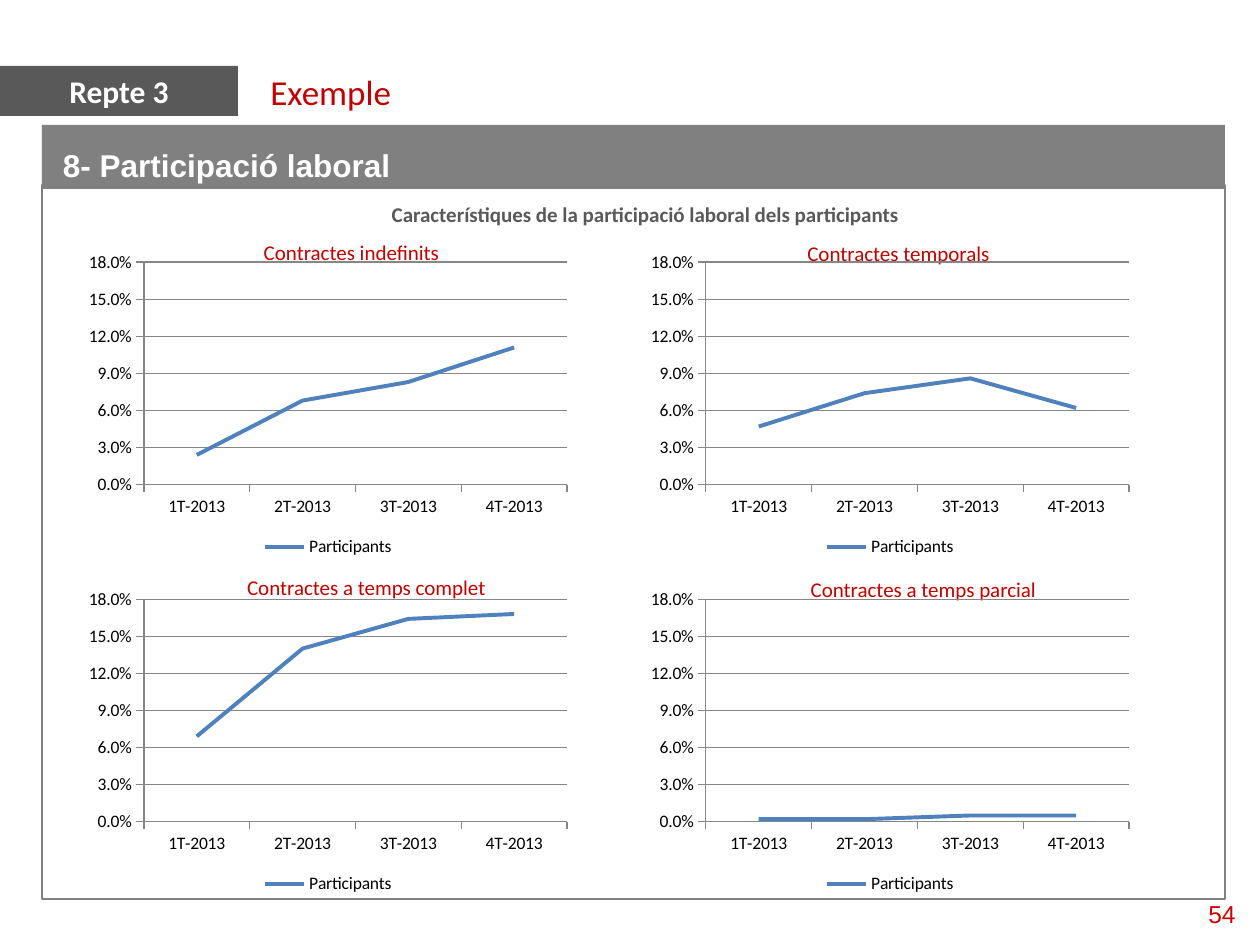
from dataclasses import dataclass

from pptx import Presentation
from pptx import util as u
from pptx.chart.data import CategoryChartData
from pptx.dml.color import RGBColor
from pptx.enum import chart as charts, shapes, text

EMU_PER_PX = 914400 / 126

WHITE = RGBColor(0xFF, 0xFF, 0xFF)
BLACK = RGBColor(0x00, 0x00, 0x00)
DARK_GRAY = RGBColor(0x59, 0x59, 0x59)
GRAY = RGBColor(0x80, 0x80, 0x80)
AXIS_GRAY = RGBColor(0x86, 0x86, 0x86)
RED = RGBColor(0xC0, 0x00, 0x00)
PAGE_RED = RGBColor(0xCC, 0x00, 0x00)
BLUE = RGBColor(0x4F, 0x81, 0xBD)

QUARTERS = ["1T-2013", "2T-2013", "3T-2013", "4T-2013"]
CHART_LEFT, CHART_TOP = 79, 246
CHART_WIDTH, CHART_HEIGHT = 498, 316
COLUMN_STEP, ROW_STEP = 562, 337


@dataclass(frozen=True)
class Box:
    left: int
    top: int
    width: int
    height: int

    def emu(self) -> list[int]:
        return [px(n) for n in (self.left, self.top, self.width, self.height)]


@dataclass(frozen=True)
class Label:
    box: Box
    words: str
    size: int
    color: RGBColor
    font: str = "Calibri"
    bold: bool = False
    align: text.PP_ALIGN = text.PP_ALIGN.CENTER


@dataclass(frozen=True)
class ContractChart:
    title_box: Box
    title: str
    values: tuple[float, ...]


def px(count: int) -> int:
    return round(count * EMU_PER_PX)


def apply(target, values: dict) -> None:
    for name, value in values.items():
        setattr(target, name, value)


def write(shape, label: Label) -> None:
    shape.text_frame.word_wrap = True
    paragraph = shape.text_frame.paragraphs[0]
    paragraph.text = label.words
    paragraph.alignment = label.align
    apply(paragraph.font, {"name": label.font, "size": u.Pt(label.size), "bold": label.bold})
    paragraph.font.color.rgb = label.color


def add_label(slide, label: Label) -> None:
    shape = slide.shapes.add_textbox(*label.box.emu())
    write(shape, label)


def add_rectangle(slide, box: Box, fill: RGBColor | None = None, line: RGBColor | None = None):
    shape = slide.shapes.add_shape(shapes.MSO_SHAPE.RECTANGLE, *box.emu())
    shape.shadow.inherit = False
    if fill is None:
        shape.fill.background()
    else:
        shape.fill.solid()
        shape.fill.fore_color.rgb = fill
    if line is None:
        shape.line.fill.background()
    else:
        shape.line.color.rgb = line
        shape.line.width = u.Pt(0.75)
    return shape


def add_line_chart(slide, box: Box, values: tuple[float, ...]) -> None:
    data = CategoryChartData(number_format="0.0%")
    data.categories = QUARTERS
    data.add_series("Participants", values)
    chart = slide.shapes.add_chart(charts.XL_CHART_TYPE.LINE, *box.emu(), data).chart
    apply(chart.font, {"name": "Calibri", "size": u.Pt(10)})
    chart.font.color.rgb = BLACK
    apply(chart, {"has_title": False, "has_legend": True})
    apply(chart.legend, {"position": charts.XL_LEGEND_POSITION.BOTTOM, "include_in_layout": False})

    # Axes
    apply(chart.value_axis, {"minimum_scale": 0, "maximum_scale": 0.18, "major_unit": 0.03,
                             "has_major_gridlines": True})
    apply(chart.value_axis.tick_labels, {"number_format": "0.0%", "number_format_is_linked": False})
    chart.value_axis.major_gridlines.format.line.color.rgb = AXIS_GRAY
    for axis in (chart.category_axis, chart.value_axis):
        axis.major_tick_mark = charts.XL_TICK_MARK.OUTSIDE
        axis.format.line.color.rgb = AXIS_GRAY

    # Series
    chart.plots[0].vary_by_categories = False
    series = chart.plots[0].series[0]
    series.smooth = False
    series.marker.style = charts.XL_MARKER_STYLE.NONE
    series.format.line.color.rgb = BLUE
    series.format.line.width = u.Pt(2.25)


LABELS = [
    Label(Box(1196, 893, 64, 43), "54", 14, PAGE_RED, "Arial", align=text.PP_ALIGN.LEFT),
    Label(Box(258, 64, 927, 50), "Exemple", 20, RED, align=text.PP_ALIGN.LEFT),
    Label(Box(154, 195, 983, 50),
          "Característiques de la participació laboral dels participants", 12, DARK_GRAY, bold=True),
]
HEADING = Label(Box(42, 125, 1183, 64), "8- Participació laboral", 18, WHITE, "Arial", True,
                text.PP_ALIGN.LEFT)
TAB = Label(Box(0, 66, 238, 50), "Repte 3", 18, WHITE, bold=True)
PANEL = Box(42, 185, 1183, 714)

CONTRACT_CHARTS = [
    ContractChart(Box(233, 233, 237, 50), "Contractes indefinits", (0.024, 0.068, 0.083, 0.111)),
    ContractChart(Box(780, 234, 237, 50), "Contractes temporals", (0.047, 0.074, 0.086, 0.062)),
    ContractChart(Box(223, 568, 287, 50), "Contractes a temps complet", (0.069, 0.14, 0.164, 0.168)),
    ContractChart(Box(780, 570, 287, 50), "Contractes a temps parcial", (0.002, 0.002, 0.005, 0.005)),
]


def main() -> None:
    presentation = Presentation()
    apply(presentation, {"slide_width": px(1260), "slide_height": px(945)})
    slide = presentation.slides.add_slide(presentation.slide_layouts[6])

    # Heading bar and panel
    heading = add_rectangle(slide, HEADING.box, fill=GRAY)
    write(heading, HEADING)
    apply(heading.text_frame, {"margin_left": px(21), "margin_top": px(21), "margin_bottom": px(5),
                               "vertical_anchor": text.MSO_ANCHOR.MIDDLE})
    add_rectangle(slide, PANEL, line=GRAY)

    # Titles and page number
    for label in LABELS:
        add_label(slide, label)
    for contract in CONTRACT_CHARTS:
        add_label(slide, Label(contract.title_box, contract.title, 12, RED))

    # Two by two grid of charts
    for index, contract in enumerate(CONTRACT_CHARTS):
        row, column = divmod(index, 2)
        box = Box(CHART_LEFT + column * COLUMN_STEP, CHART_TOP + row * ROW_STEP,
                  CHART_WIDTH, CHART_HEIGHT)
        add_line_chart(slide, box, contract.values)

    # Challenge tab
    tab = add_rectangle(slide, TAB.box, fill=DARK_GRAY)
    write(tab, TAB)
    tab.text_frame.vertical_anchor = text.MSO_ANCHOR.TOP

    presentation.save("out.pptx")


if __name__ == "__main__":
    main()
